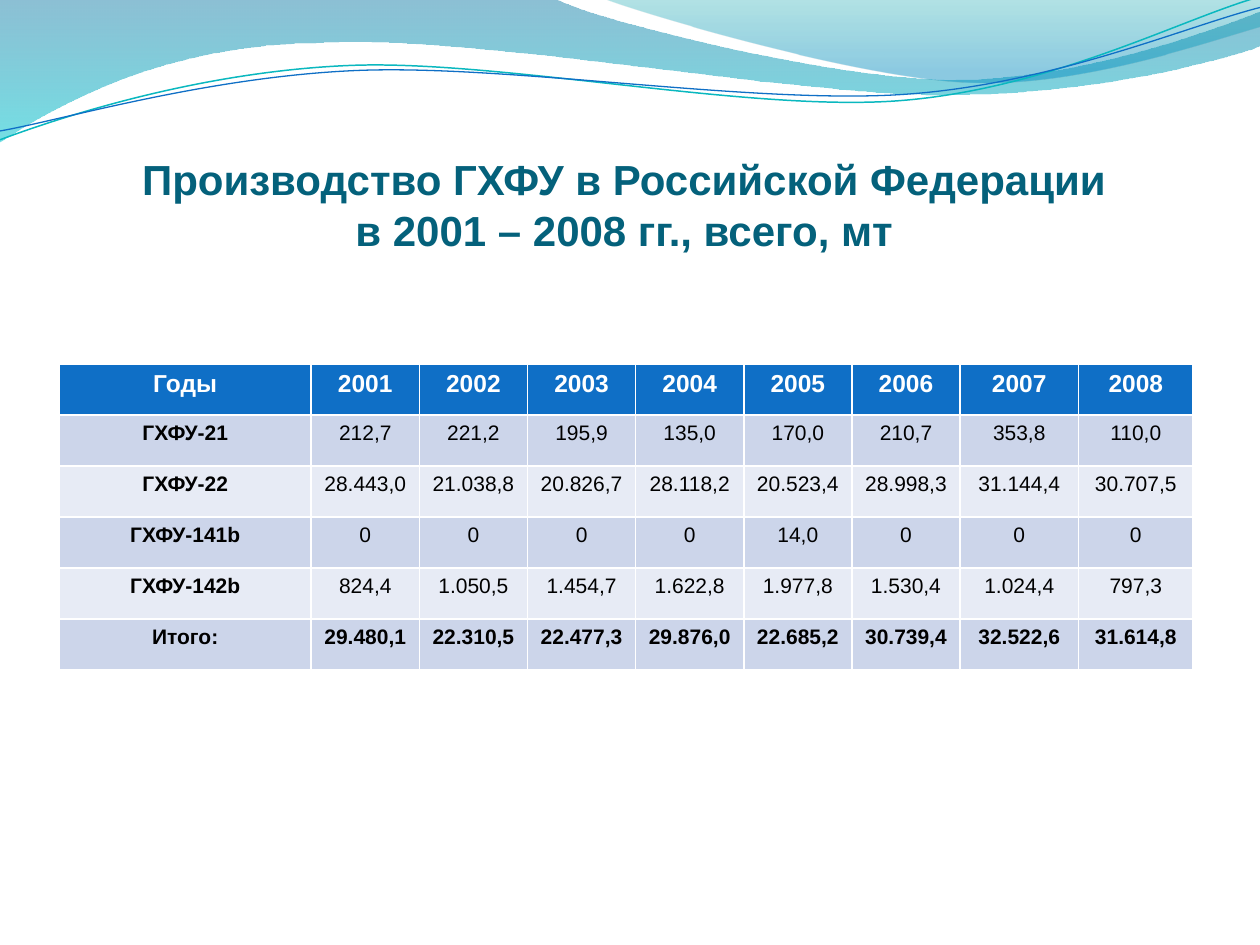
"""Build a slide with a wave header and a table of HCFC production by year."""
import math
from dataclasses import dataclass

from lxml import etree
from pptx import Presentation
from pptx.dml.color import RGBColor
from pptx.enum.text import MSO_ANCHOR, MSO_AUTO_SIZE, PP_ALIGN
from pptx.oxml.ns import qn
from pptx.util import Inches, Pt

CENTER = PP_ALIGN.CENTER
BOTTOM = MSO_ANCHOR.BOTTOM
NO_AUTOFIT = MSO_AUTO_SIZE.NONE
TITLE_ONLY = 5


@dataclass(frozen=True)
class Theme:
    """Colours, font and type sizes of the slide."""
    font: str = "Arial"
    title_size: float = 24
    header_size: float = 14
    body_size: float = 12
    title: str = "04617B"
    header: str = "0F6FC6"
    white: str = "FFFFFF"
    black: str = "000000"
    bands: tuple = ("CCD5EA", "E7EBF5")
    teal_line: str = "0AB8BF"
    left_wave: tuple = ((0, "0074A1", 45), (1, "00C6CF", 55))
    right_wave: tuple = ((0, "00A1A9", 30), (0.8, "008BBF", 45))
    curve_tilt: float = -2.7


def rgb(color):
    """Turn a hex string into a colour."""
    return RGBColor.from_string(color)


def turn(x, y, degrees):
    """Rotate a point clockwise about the slide's top left corner."""
    angle = math.radians(degrees)
    return (x * math.cos(angle) - y * math.sin(angle),
            x * math.sin(angle) + y * math.cos(angle))


def write_text(text_frame, text, *, font, size, color, bold=False):
    """Write one centred paragraph; a vertical tab breaks the line."""
    paragraph = text_frame.paragraphs[0]
    paragraph.text = text
    paragraph.alignment = CENTER
    for run in paragraph.runs:
        run.font.name = font
        run.font.size = Pt(size)
        run.font.bold = bold
        run.font.color.rgb = rgb(color)


class SlideBuilder:
    """Hold the theme and the current slide, and add elements to it."""

    def __init__(self, slide, theme):
        self.slide = slide
        self.theme = theme

    def outline(self, start, pieces, close, tilt=0):
        """Add a freeform of straight pieces (2 numbers) and Bezier pieces (6)."""
        points = [start] + [piece[i:i + 2] for piece in pieces for i in range(0, len(piece), 2)]
        first, *others = [tuple(map(Inches, turn(*point, -tilt))) for point in points]
        builder = self.slide.shapes.build_freeform(*first)
        builder.add_line_segments(others, close=close)
        shape = builder.convert_to_shape()
        shape.shadow.inherit = False

        segments = iter(list(shape._element.iter(qn("a:lnTo"))))
        for piece in pieces:
            segment = next(segments)
            if len(piece) == 6:
                bezier = etree.Element(qn("a:cubicBezTo"))
                segment.addprevious(bezier)
                for part in (segment, next(segments), next(segments)):
                    bezier.append(part[0])
                    part.getparent().remove(part)

        half_width, half_height = shape.width / 2, shape.height / 2
        center_x, center_y = turn(shape.left + half_width, shape.top + half_height, tilt)
        shape.left, shape.top = round(center_x - half_width), round(center_y - half_height)
        shape.rotation = tilt
        return shape

    def wave(self, start, pieces, stops):
        """Add a closed wave with a translucent gradient running downwards."""
        shape = self.outline(start, pieces, True)
        shape.line.fill.background()
        shape.fill.gradient()
        shape.fill.gradient_angle = 270
        for gradient_stop, (position, color, _) in zip(shape.fill.gradient_stops, stops):
            gradient_stop.position = position
            gradient_stop.color.rgb = rgb(color)
        colors = shape._element.spPr.iter(qn("a:srgbClr"))
        for element, (_, _, opacity) in zip(colors, stops):
            etree.SubElement(element, qn("a:alpha"), val=str(opacity * 1000))

    def curve(self, start, pieces, color, width):
        """Add an open curved line."""
        shape = self.outline(start, pieces, False, self.theme.curve_tilt)
        shape.fill.background()
        shape.line.color.rgb = rgb(color)
        shape.line.width = Pt(width)

    def title(self, text, left, top, width, height):
        """Place the title above the waves and write its text."""
        shape = self.slide.shapes.title
        self.slide.shapes._spTree.append(shape._element)
        shape.left, shape.top = Inches(left), Inches(top)
        shape.width, shape.height = Inches(width), Inches(height)
        frame = shape.text_frame
        frame.auto_size = NO_AUTOFIT
        frame.word_wrap = True
        frame.vertical_anchor = BOTTOM
        frame.margin_left = frame.margin_right = frame.margin_bottom = 0
        frame.margin_top = Inches(0.05)
        write_text(frame, text, font=self.theme.font, size=self.theme.title_size,
                   color=self.theme.title, bold=True)

    def table(self, rows, left, top, column_widths, row_height):
        """Add a banded table with a header row and a bold total row."""
        theme = self.theme
        table = self.slide.shapes.add_table(
            len(rows), len(column_widths), Inches(left), Inches(top),
            Inches(sum(column_widths)), Inches(row_height * len(rows))).table
        for column, width in zip(table.columns, column_widths):
            column.width = Inches(width)
        for row_index, values in enumerate(rows):
            header = row_index == 0
            total = row_index == len(rows) - 1
            fill = theme.header if header else theme.bands[(row_index - 1) % 2]
            for column_index, value in enumerate(values):
                cell = table.cell(row_index, column_index)
                cell.fill.solid()
                cell.fill.fore_color.rgb = rgb(fill)
                write_text(cell.text_frame, value, font=theme.font,
                           size=theme.header_size if header else theme.body_size,
                           color=theme.white if header else theme.black,
                           bold=header or total or column_index == 0)


def main():
    """Build and save the presentation."""
    presentation = Presentation()
    presentation.slide_width, presentation.slide_height = Inches(10), Inches(7.5)
    slide = presentation.slides.add_slide(presentation.slide_layouts[TITLE_ONLY])
    theme = Theme()
    builder = SlideBuilder(slide, theme)

    builder.wave((0, -0.01), [
        (4.4, -0.01), (4.76, 0.17, 6.64, 0.63, 7.58, 0.63),
        (8.53, 0.63, 9.58, 0.26, 10, 0.09), (10.01, 0.36),
        (9.83, 0.44, 8.7, 0.76, 7.46, 0.75), (6.22, 0.75, 3.82, 0.28, 2.57, 0.34),
        (1.29, 0.35, 0.46, 0.83, -0.01, 1.13)], theme.left_wave)
    builder.wave((4.79, -0.01), [
        (5.09, 0.11, 6.82, 0.62, 7.69, 0.65), (8.56, 0.69, 9.61, 0.32, 10, 0.21),
        (10, 0)], theme.right_wave)
    builder.curve((0, 1.11), [
        (0.48, 0.93, 1.58, 0.57, 2.77, 0.52), (3.95, 0.47, 5.93, 0.89, 7.13, 0.8),
        (8.33, 0.71, 9.38, 0.15, 9.98, -0.02)], theme.teal_line, 0.85)
    builder.curve((0, 1.04), [
        (0.47, 0.96, 1.64, 0.61, 2.83, 0.56), (4.03, 0.51, 5.97, 0.83, 7.17, 0.75),
        (8.36, 0.67, 9.41, 0.21, 10, 0.06)], theme.header, 0.75)

    builder.title("Производство ГХФУ в Российской Федерации \vв 2001 – 2008 гг., всего, мт ",
                  0.5, 0.77, 9, 1.25)
    rows = [
        ["Годы", *map(str, range(2001, 2009))],
        ["ГХФУ-21", "212,7", "221,2", "195,9", "135,0", "170,0", "210,7", "353,8", "110,0"],
        ["ГХФУ-22", "28.443,0", "21.038,8", "20.826,7", "28.118,2",
         "20.523,4", "28.998,3", "31.144,4", "30.707,5"],
        ["ГХФУ-141b", "0", "0", "0", "0", "14,0", "0", "0", "0"],
        ["ГХФУ-142b", "824,4", "1.050,5", "1.454,7", "1.622,8",
         "1.977,8", "1.530,4", "1.024,4", "797,3"],
        ["Итого:", "29.480,1", "22.310,5", "22.477,3", "29.876,0",
         "22.685,2", "30.739,4", "32.522,6", "31.614,8"],
    ]
    builder.table(rows, 0.47, 2.89, [2, *[5.15 / 6] * 6, 0.94, 0.91], 2.43 / len(rows))
    presentation.save("out.pptx")


if __name__ == "__main__":
    main()
